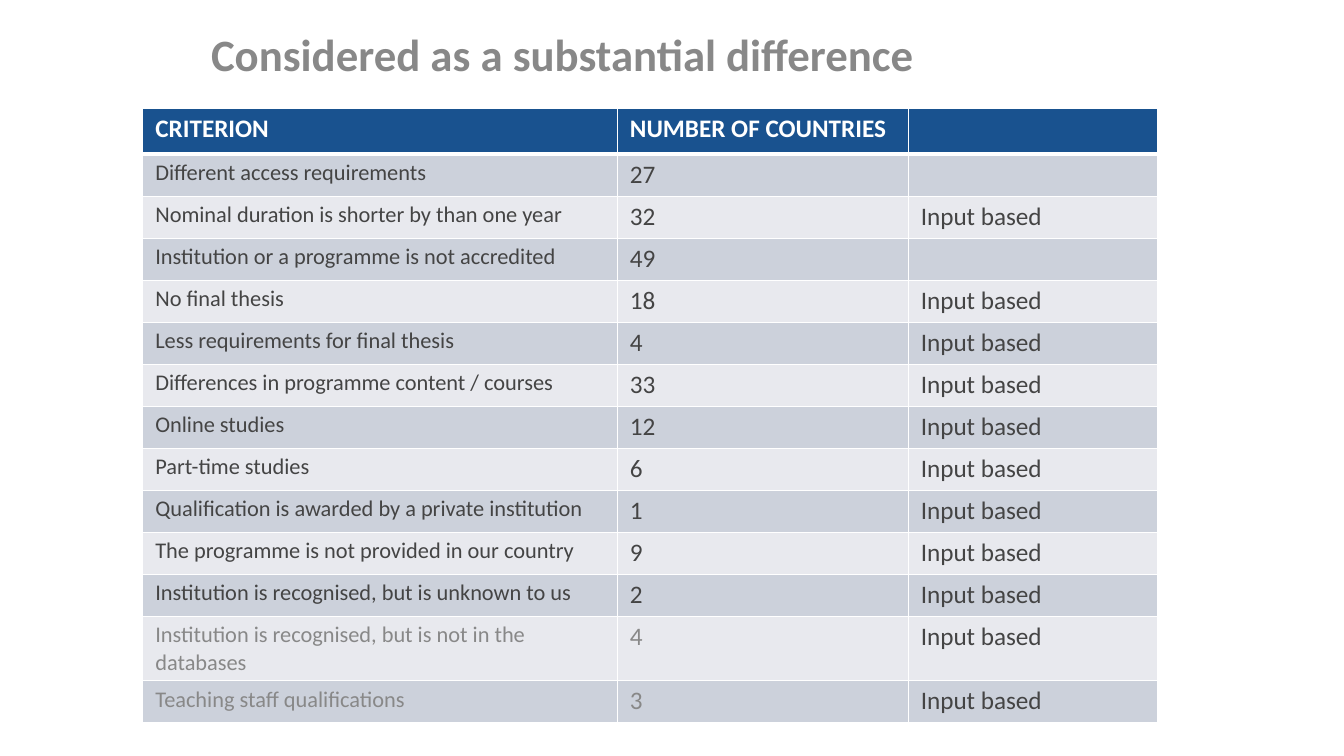
import pptx
import pptx.dml.color
import pptx.enum.text
import pptx.oxml.ns
import pptx.util
from lxml import etree

PX = 9525  # EMU per px, 96 px to the inch
FONT = "Calibri"
WHITE, BLUE, DARK, GREY = "FFFFFF", "19528F", "444444", "888888"
BANDS = ["CCD1DB", "E8E9EE"]

HEADINGS = ["CRITERION", "NUMBER OF COUNTRIES", ""]
INPUT = "Input based"
CRITERIA = [
    ("Different access requirements", 27, ""),
    ("Nominal duration is shorter by than one year", 32, INPUT),
    ("Institution or a programme is not accredited", 49, ""),
    ("No final thesis", 18, INPUT),
    ("Less requirements for final thesis", 4, INPUT),
    ("Differences in programme content / courses", 33, INPUT),
    ("Online studies", 12, INPUT),
    ("Part-time studies", 6, INPUT),
    ("Qualification is awarded by a private institution", 1, INPUT),
    ("The programme is not provided in our country", 9, INPUT),
    ("Institution is recognised, but is unknown to us", 2, INPUT),
    ("Institution is recognised, but is not in the databases", 4, INPUT),
    ("Teaching staff qualifications", 3, INPUT),
]
MUTED_ROWS = 2  # last rows, with greyed criterion and count
COLUMN_WIDTHS = [452, 277, 238]
HEADER_HEIGHT, ROW_HEIGHT = 44, 40


def px(n):
    return pptx.util.Emu(n * PX)


def rgb(hex_string):
    return pptx.dml.color.RGBColor.from_string(hex_string)


def write(tf, text, size=18, color=DARK, bold=False, spacing=None):
    tf.word_wrap = True
    p = tf.paragraphs[0]
    p.line_spacing = spacing
    p.font.size = pptx.util.Pt(size)
    if text:
        r = p.add_run()
        r.text = text
        r.font.name = FONT
        r.font.size = pptx.util.Pt(size)
        r.font.bold = bold
        r.font.color.rgb = rgb(color)


def set_borders(cell, top=1, bottom=1):
    """Draw white cell borders; widths are in points."""
    tc_pr = cell._tc.get_or_add_tcPr()
    qn = pptx.oxml.ns.qn
    for side, width in (("L", 1), ("R", 1), ("T", top), ("B", bottom)):
        ln = etree.SubElement(tc_pr, qn("a:ln" + side), w=str(pptx.util.Pt(width)))
        fill = etree.SubElement(ln, qn("a:solidFill"))
        etree.SubElement(fill, qn("a:srgbClr"), val=WHITE)


def style_cell(cell, fill, **borders):
    cell.margin_left = cell.margin_right = px(12)
    cell.margin_top = cell.margin_bottom = px(5)
    set_borders(cell, **borders)
    cell.fill.solid()
    cell.fill.fore_color.rgb = rgb(fill)


def add_title(slide, left, top, width, height):
    tf = slide.shapes.add_textbox(px(left), px(top), px(width), px(height)).text_frame
    tf.margin_left = tf.margin_top = tf.margin_right = tf.margin_bottom = 0
    tf.vertical_anchor = pptx.enum.text.MSO_ANCHOR.TOP
    write(tf, "Considered as a substantial difference",
          size=32, color=GREY, bold=True, spacing=0.96)


def add_criteria_table(slide, left, top):
    count = len(CRITERIA)
    height = HEADER_HEIGHT + count * ROW_HEIGHT
    table = slide.shapes.add_table(
        count + 1, len(HEADINGS), px(left), px(top),
        px(sum(COLUMN_WIDTHS)), px(height)).table
    for column, width in zip(table.columns, COLUMN_WIDTHS):
        column.width = px(width)
    for row in table.rows:
        row.height = px(ROW_HEIGHT)
    table.rows[0].height = px(HEADER_HEIGHT)

    for c, heading in enumerate(HEADINGS):
        cell = table.cell(0, c)
        style_cell(cell, BLUE, bottom=3)
        write(cell.text_frame, heading, color=WHITE, bold=True)

    for i, values in enumerate(CRITERIA):
        muted = i >= count - MUTED_ROWS
        for c, value in enumerate(values):
            cell = table.cell(i + 1, c)
            style_cell(cell, BANDS[i % 2], top=3 if i == 0 else 1)
            write(cell.text_frame, str(value), size=16 if c == 0 else 18,
                  color=GREY if muted and c < 2 else DARK)


def main():
    prs = pptx.Presentation()
    prs.slide_width, prs.slide_height = px(1280), px(720)
    slide = prs.slides.add_slide(prs.slide_layouts[6])
    add_title(slide, 201, 29, 1049, 82)
    add_criteria_table(slide, 136, 103)
    prs.save("out.pptx")


if __name__ == "__main__":
    main()
